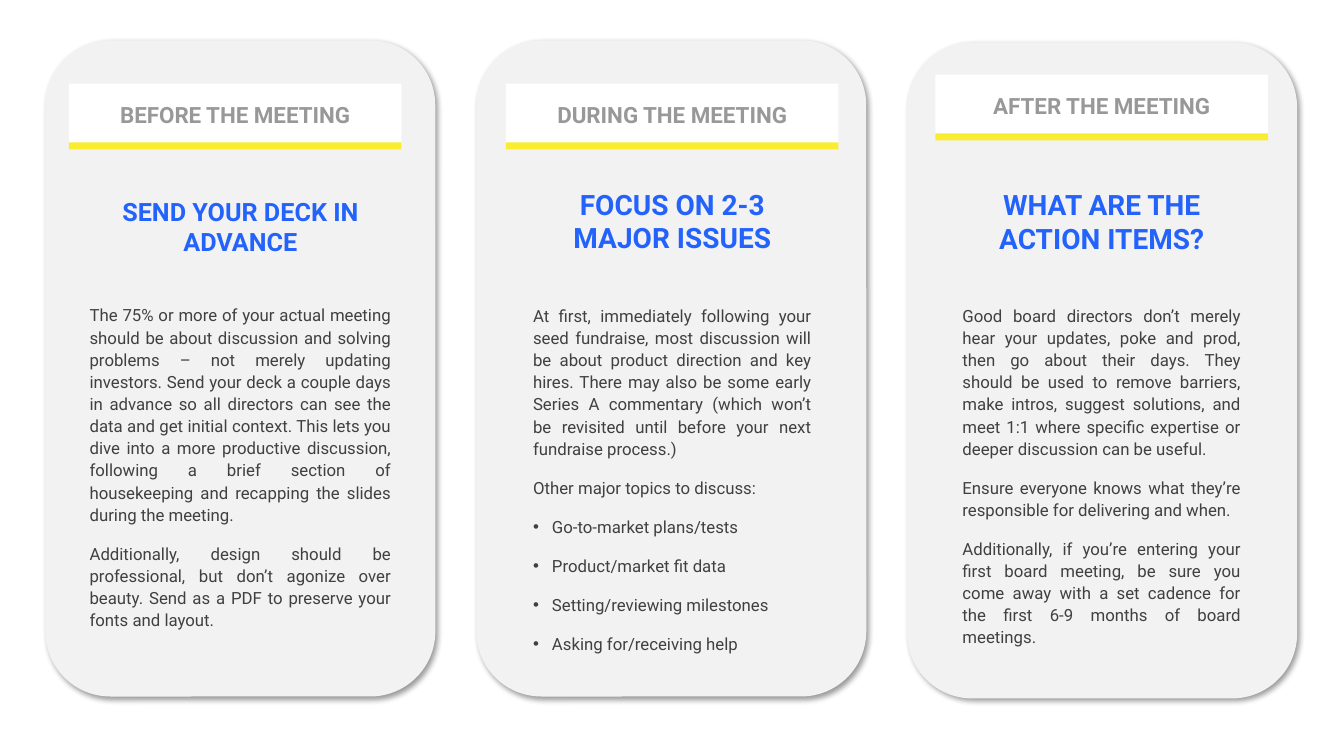
"""Build a slide with three cards: before, during and after a board meeting."""
from lxml.etree import SubElement
from pptx import Presentation
from pptx.dml.color import RGBColor
from pptx.enum.shapes import MSO_SHAPE
from pptx.enum.text import MSO_ANCHOR, PP_ALIGN
from pptx.oxml.ns import qn
from pptx.util import Pt

FONT = "Roboto"
CARD_LEFT, CARD_PITCH, CARD_SIZE = 32.4, 307.8, (278.6, 468.7)
BANNER_SIZE, BAR_OFFSET, BAR_HEIGHT = (237.6, 43.9), 42, 5
BULLET_INDENT = 13.5

CARDS = [
    {
        "banner": "BEFORE THE MEETING",
        "heading": "SEND YOUR DECK IN ADVANCE",
        "heading_size": 18,
        "card_top": 28.8,
        "banner_at": (49.2, 59.8),
        "text_box": (56.9, 136.8, 229.7, 319.7),
        "body": [
            "The 75% or more of your actual meeting should be about discussion and solving "
            "problems – not merely updating investors. Send your deck a couple days in advance "
            "so all directors can see the data and get initial context. This lets you dive into "
            "a more productive discussion, following a brief section of housekeeping and "
            "recapping the slides during the meeting.",
            "Additionally, design should be professional, but don’t agonize over beauty. "
            "Send as a PDF to preserve your fonts and layout.",
        ],
        "bullets": [],
    },
    {
        "banner": "DURING THE MEETING",
        "heading": "FOCUS ON 2-3 MAJOR ISSUES",
        "heading_size": 20,
        "card_top": 28.8,
        "banner_at": (361.4, 59.8),
        "text_box": (373.7, 130.3, 213.1, 343.4),
        "body": [
            "At first, immediately following your seed fundraise, most discussion will be about "
            "product direction and key hires. There may also be some early Series A commentary "
            "(which won’t be revisited until before your next fundraise process.)",
            "Other major topics to discuss:",
        ],
        "bullets": [
            "Go-to-market plans/tests",
            "Product/market fit data",
            "Setting/reviewing milestones",
            "Asking for/receiving help",
        ],
    },
    {
        "banner": "AFTER THE MEETING",
        "heading": "WHAT ARE THE ACTION ITEMS?",
        "heading_size": 20,
        "card_top": 30.2,
        "banner_at": (668.2, 53.3),
        "text_box": (680.4, 130.3, 213.1, 339.1),
        "body": [
            "Good board directors don’t merely hear your updates, poke and prod, then go about "
            "their days. They should be used to remove barriers, make intros, suggest solutions, "
            "and meet 1:1 where specific expertise or deeper discussion can be useful.",
            "Ensure everyone knows what they’re responsible for delivering and when.",
            "Additionally, if you’re entering your first board meeting, be sure you come away "
            "with a set cadence for the first 6-9 months of board meetings.",
        ],
        "bullets": [],
    },
]


def color(hex_value):
    return RGBColor.from_string(hex_value)


def add_block(slide, kind, left, top, width, height, fill):
    shape = slide.shapes.add_shape(kind, Pt(left), Pt(top), Pt(width), Pt(height))
    shape.shadow.inherit = False
    shape.fill.solid()
    shape.fill.fore_color.rgb = color(fill)
    shape.line.fill.background()
    return shape


def add_shadow(shape):
    effects = shape.element.spPr.find(qn("a:effectLst"))
    shadow = SubElement(effects, qn("a:outerShdw"), blurRad=str(Pt(4)), dist=str(Pt(3)),
                        dir=str(45 * 60000), algn="tl", rotWithShape="0")
    black = SubElement(shadow, qn("a:srgbClr"), val="000000")
    SubElement(black, qn("a:alpha"), val="40000")


def write(paragraph, text, size, hex_value, bold, alignment):
    paragraph.text = text
    paragraph.alignment = alignment
    font = paragraph.runs[0].font
    font.name, font.size, font.bold = FONT, Pt(size), bold
    font.color.rgb = color(hex_value)


def add_bullet(paragraph):
    properties = paragraph._p.get_or_add_pPr()
    properties.set("marL", str(Pt(BULLET_INDENT)))
    properties.set("indent", str(-Pt(BULLET_INDENT)))
    SubElement(properties, qn("a:buFont"), typeface="Arial")
    SubElement(properties, qn("a:buChar"), char="•")


def add_banner(slide, card):
    left, top = card["banner_at"]
    width, height = BANNER_SIZE
    banner = add_block(slide, MSO_SHAPE.RECTANGLE, left, top, width, height, "FFFFFF")
    banner.text_frame.vertical_anchor = MSO_ANCHOR.MIDDLE
    write(banner.text_frame.paragraphs[0], card["banner"], 16, "989898", True, PP_ALIGN.CENTER)
    add_block(slide, MSO_SHAPE.RECTANGLE, left, top + BAR_OFFSET, width, BAR_HEIGHT, "F9EC31")


def add_text(slide, card):
    frame = slide.shapes.add_textbox(*map(Pt, card["text_box"])).text_frame
    frame.word_wrap = True
    heading, size = frame.paragraphs[0], card["heading_size"]
    write(heading, card["heading"], size, "2363FB", True, PP_ALIGN.CENTER)
    heading.space_before = Pt(6)
    heading.space_after = Pt(round(size * 1.17 + 6))
    for text in card["body"] + card["bullets"]:
        paragraph = frame.add_paragraph()
        write(paragraph, text, 12, "404040", False, PP_ALIGN.JUSTIFY)
        paragraph.line_spacing = 1.1
        paragraph.space_before = paragraph.space_after = Pt(6)
        if text in card["bullets"]:
            add_bullet(paragraph)


def main():
    presentation = Presentation()
    presentation.slide_width, presentation.slide_height = Pt(960), Pt(540)
    slide = presentation.slides.add_slide(presentation.slide_layouts[6])
    for index, card in enumerate(CARDS):
        left = CARD_LEFT + index * CARD_PITCH
        panel = add_block(slide, MSO_SHAPE.ROUNDED_RECTANGLE, left, card["card_top"],
                          *CARD_SIZE, "F2F2F2")
        add_shadow(panel)
        add_banner(slide, card)
        add_text(slide, card)
    presentation.save("out.pptx")


if __name__ == "__main__":
    main()
